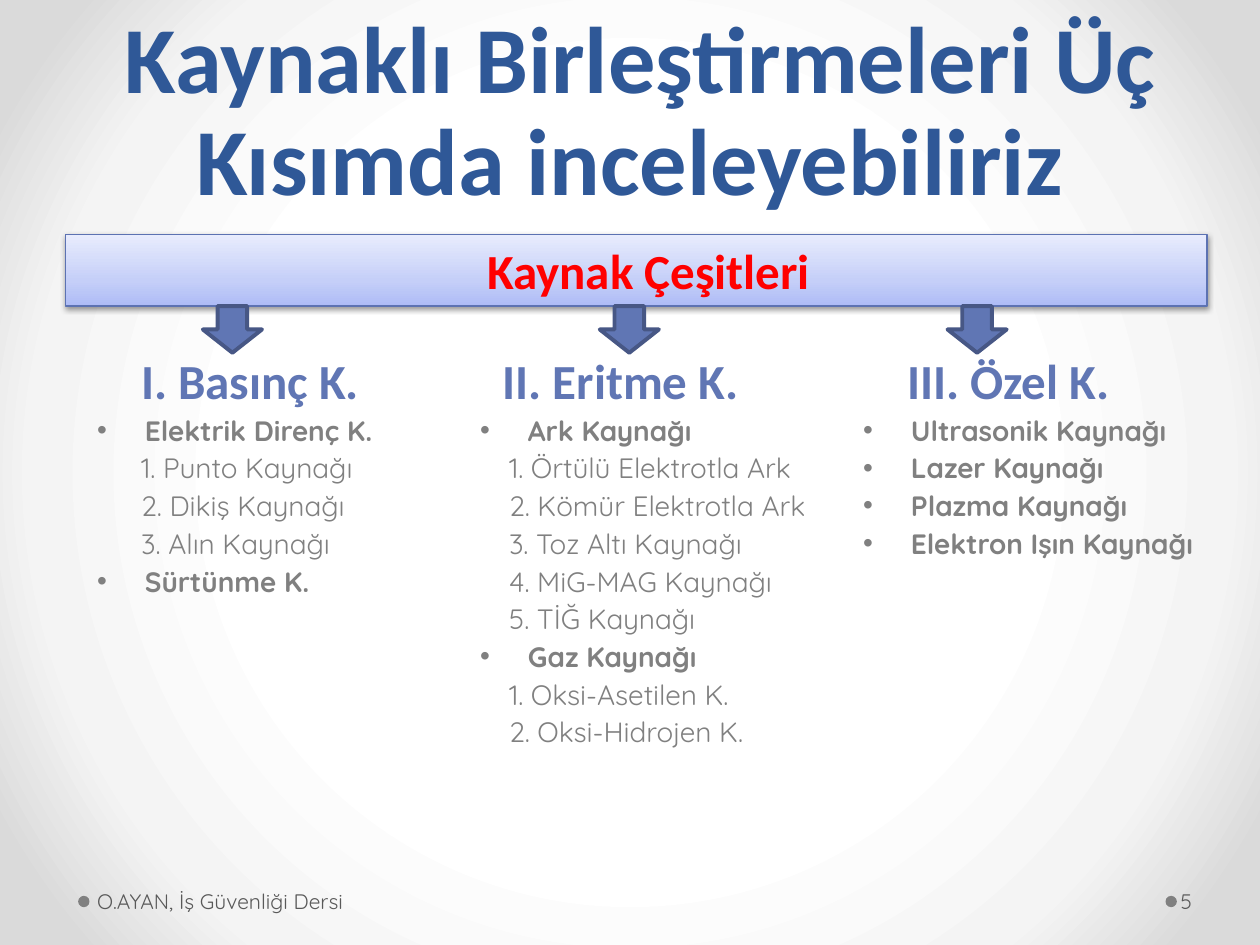
import pptx
import pptx.util
import pptx.dml.color
import pptx.enum.shapes
import pptx.enum.text
import pptx.oxml
import pptx.oxml.ns

Inches = pptx.util.Inches
Pt = pptx.util.Pt
qn = pptx.oxml.ns.qn
SHAPE = pptx.enum.shapes.MSO_SHAPE
ANCHOR = pptx.enum.text.MSO_ANCHOR
ALIGN = pptx.enum.text.PP_ALIGN
A_NS = pptx.oxml.ns.nsdecls("a")

COLUMNS = [
    ("I. Basınç K.", 0.35, 0.35, [
        ("Elektrik Direnç K.", ["1. Punto Kaynağı", "2. Dikiş Kaynağı", "3. Alın Kaynağı"]),
        ("Sürtünme K.", []),
    ]),
    ("II. Eritme K.", 0.18, 0.23, [
        ("Ark Kaynağı", ["1. Örtülü Elektrotla Ark", "2. Kömür Elektrotla Ark",
                         "3. Toz Altı Kaynağı", "4. MiG-MAG Kaynağı", "5. TİĞ Kaynağı"]),
        ("Gaz Kaynağı", ["1. Oksi-Asetilen K.", "2. Oksi-Hidrojen K."]),
    ]),
    ("III. Özel K.", 0.35, 0.35, [
        ("Ultrasonik Kaynağı", []),
        ("Lazer Kaynağı", []),
        ("Plazma Kaynağı", []),
        ("Elektron Işın Kaynağı", []),
    ]),
]


def rgb(color):
    return pptx.dml.color.RGBColor.from_string(color)


def gradient(stops, direction):
    marks = "".join(
        f'<a:gs pos="{position * 1000}"><a:srgbClr val="{color}"/></a:gs>'
        for position, color in stops)
    return pptx.oxml.parse_xml(
        f'<a:gradFill {A_NS} rotWithShape="1"><a:gsLst>{marks}</a:gsLst>{direction}</a:gradFill>')


def swap_solid_fill(parent, new_fill):
    parent.replace(parent.find(qn("a:solidFill")), new_fill)


def write(paragraph, text, size=16, font="Quicksand", color="808080", bold=False,
          align=ALIGN.LEFT, before=0, line=None, indent=0, hanging=0, bullet=None):
    run = paragraph.add_run()
    run.text = text
    run.font.size = Pt(size)
    run.font.name = font
    run.font.bold = bold
    run.font.color.rgb = rgb(color)
    paragraph.alignment = align
    paragraph.space_before = Pt(before)
    if line:
        paragraph.line_spacing = Pt(line)
    properties = paragraph._p.get_or_add_pPr()
    properties.set("marL", str(Inches(indent)))
    properties.set("indent", str(-Inches(hanging)))
    if bullet:
        properties.append(pptx.oxml.parse_xml(f'<a:buFont {A_NS} typeface="Arial"/>'))
        properties.append(pptx.oxml.parse_xml(f'<a:buChar {A_NS} char="{bullet}"/>'))
    else:
        properties.append(pptx.oxml.parse_xml(f"<a:buNone {A_NS}/>"))


class WeldingSlide:
    heading_font = "Calibri"
    accent = "6076B4"
    alert = "FF0000"

    def __init__(self, deck):
        self.slide = deck.slides.add_slide(deck.slide_layouts[4])

    def background(self, stops):
        self.slide.background.fill.solid()
        direction = ('<a:path path="circle"><a:fillToRect l="50000" t="50000" '
                     'r="50000" b="50000"/></a:path>')
        swap_solid_fill(self.slide.element.find(".//" + qn("p:bgPr")), gradient(stops, direction))

    def place(self, holder, left, top, width, height, anchor):
        holder.left, holder.top = Inches(left), Inches(top)
        holder.width, holder.height = Inches(width), Inches(height)
        frame = holder.text_frame
        frame.auto_size = pptx.enum.text.MSO_AUTO_SIZE.NONE
        frame.word_wrap = True
        frame.vertical_anchor = anchor
        return frame

    def title(self, text):
        frame = self.place(self.slide.shapes.title, 0.5, 0, 9, 1.75, ANCHOR.BOTTOM)
        write(frame.paragraphs[0], text, size=54, font=self.heading_font, color="2F5897",
              bold=True, align=ALIGN.CENTER, line=58)

    def column(self, holder, left, heading, heading_indent, step_indent, groups):
        frame = self.place(holder, left, 2.73, 3.04, 3.97, ANCHOR.TOP)
        write(frame.paragraphs[0], heading, size=28, font=self.heading_font,
              color=self.accent, bold=True, indent=heading_indent)
        for method, steps in groups:
            write(frame.add_paragraph(), method, bold=True, before=2.35,
                  indent=0.38, hanging=0.38, bullet="•")
            for step in steps:
                write(frame.add_paragraph(), step, before=2.35, indent=step_indent)

    def columns(self, contents):
        holders = list(self.slide.placeholders)[1:]
        for number, (holder, content) in enumerate(zip(holders, contents)):
            self.column(holder, 0.67 + number * 3.04, *content)
        for unused in holders[len(contents):]:
            unused.element.getparent().remove(unused.element)

    def shape(self, kind, left, top, width, height, fill, line=None, line_width=0):
        shape = self.slide.shapes.add_shape(
            kind, Inches(left), Inches(top), Inches(width), Inches(height))
        shape.shadow.inherit = False
        shape.fill.solid()
        shape.fill.fore_color.rgb = rgb(fill)
        if line:
            shape.line.color.rgb = rgb(line)
            shape.line.width = Pt(line_width)
        else:
            shape.line.fill.background()
        return shape

    def banner(self, text):
        banner = self.shape(SHAPE.RECTANGLE, 0.52, 1.86, 9.06, 0.57, "C5CFF8", "5C72B2", 0.75)
        properties = banner.element.spPr
        swap_solid_fill(properties, gradient(
            [(0, "ADBBF6"), (35, "C5CFF8"), (100, "E8ECFD")],
            '<a:lin ang="16200000" scaled="0"/>'))
        properties.find(qn("a:effectLst")).append(pptx.oxml.parse_xml(
            f'<a:outerShdw {A_NS} blurRad="{Pt(3.1)}" dist="{Pt(1.6)}" dir="5400000" '
            'rotWithShape="0"><a:srgbClr val="000000"><a:alpha val="38000"/>'
            '</a:srgbClr></a:outerShdw>'))
        frame = banner.text_frame
        frame.margin_left = Inches(0.29)
        frame.vertical_anchor = ANCHOR.MIDDLE
        write(frame.paragraphs[0], text, size=28, font=self.heading_font,
              color=self.alert, bold=True, align=ALIGN.CENTER)

    def arrow(self, left):
        self.shape(SHAPE.DOWN_ARROW, left, 2.43, 0.47, 0.37, self.accent, "475785", 2.25)

    def footer(self, text, dot_left, left, width, margin_left):
        self.shape(SHAPE.OVAL, dot_left, 7.11, 0.09, 0.09, "808080")
        box = self.slide.shapes.add_textbox(
            Inches(left), Inches(6.95), Inches(width), Inches(0.4))
        frame = box.text_frame
        frame.word_wrap = True
        frame.vertical_anchor = ANCHOR.MIDDLE
        frame.margin_left = Inches(margin_left)
        write(frame.paragraphs[0], text, size=12, color="595959")


def main():
    deck = pptx.Presentation()
    deck.slide_width, deck.slide_height = Inches(10), Inches(7.5)
    welding = WeldingSlide(deck)
    welding.background([(50, "FFFFFF"), (76, "F4F4F4"), (92, "DADADA")])
    welding.title(" Kaynaklı Birleştirmeleri Üç Kısımda inceleyebiliriz")
    welding.columns(COLUMNS)
    welding.footer("5", 9.25, 9.34, 0.61, 0.03)
    welding.footer("O.AYAN, İş Güvenliği Dersi", 0.62, 0.72, 3.11, 0.05)
    welding.banner("Kaynak Çeşitleri")
    for left in (4.76, 1.61, 7.52):
        welding.arrow(left)
    deck.save("out.pptx")


if __name__ == "__main__":
    main()
